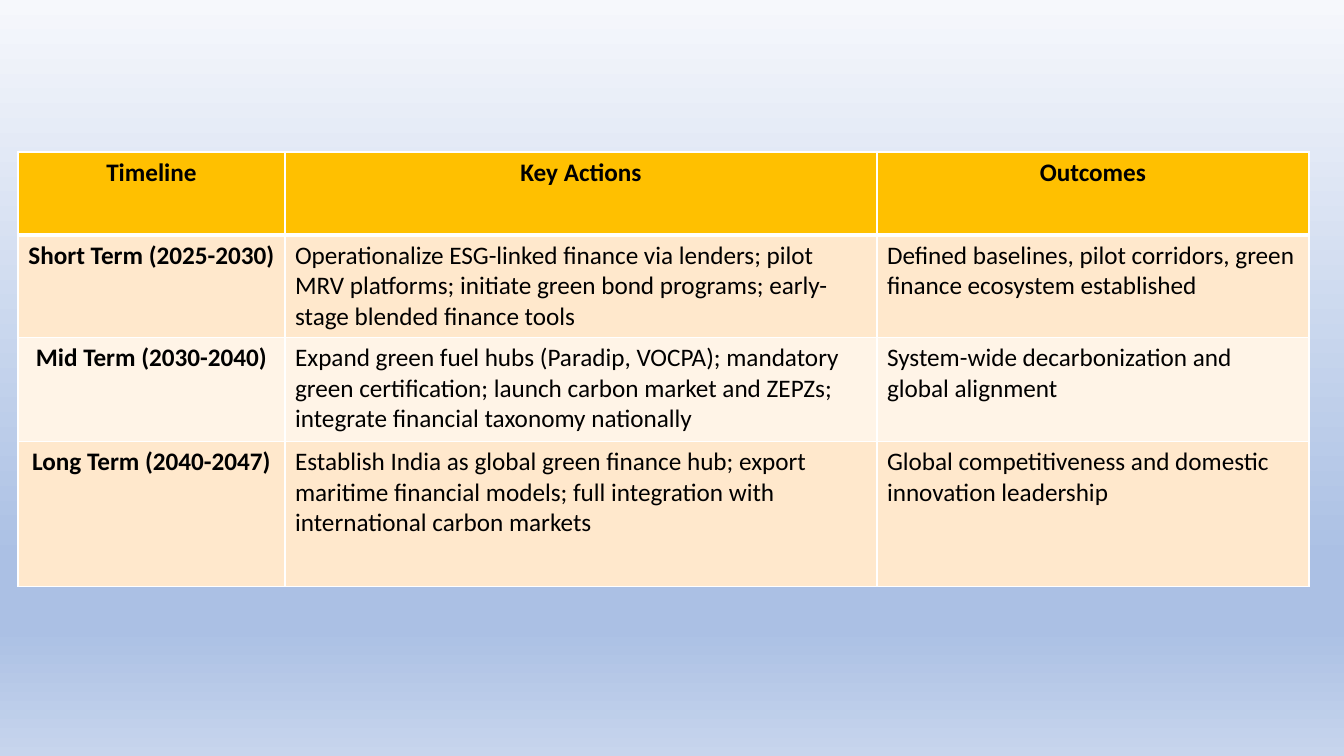
from lxml import etree
from pptx import Presentation
from pptx.dml.color import RGBColor
from pptx.enum.text import PP_ALIGN
from pptx.oxml.ns import qn
from pptx.util import Emu, Pt

CENTER, LEFT = PP_ALIGN.CENTER, PP_ALIGN.LEFT

BLACK = RGBColor(0x00, 0x00, 0x00)
WHITE = RGBColor(0xFF, 0xFF, 0xFF)
GOLD = RGBColor(0xFF, 0xC0, 0x00)
PEACH = RGBColor(0xFF, 0xE8, 0xCC)
CREAM = RGBColor(0xFF, 0xF4, 0xE7)
PALE_BLUE = RGBColor(0xF6, 0xF8, 0xFC)
MID_BLUE = RGBColor(0xAB, 0xC0, 0xE4)
SOFT_BLUE = RGBColor(0xC7, 0xD5, 0xED)

SKY = [(0, PALE_BLUE), (74, MID_BLUE), (83, MID_BLUE), (100, SOFT_BLUE)]
COLUMN_WIDTHS = [267, 592, 432]
ROW_HEIGHTS = [83, 101, 104, 145]
ROADMAP = [
    ("Timeline", "Key Actions", "Outcomes"),
    ("Short Term (2025-2030)",
     "Operationalize ESG-linked finance via lenders; pilot MRV platforms; "
     "initiate green bond programs; early-stage blended finance tools",
     "Defined baselines, pilot corridors, green finance ecosystem established"),
    ("Mid Term (2030-2040)",
     "Expand green fuel hubs (Paradip, VOCPA); mandatory green certification; "
     "launch carbon market and ZEPZs; integrate financial taxonomy nationally",
     "System-wide decarbonization and global alignment"),
    ("Long Term (2040-2047)",
     "Establish India as global green finance hub; export maritime financial "
     "models; full integration with international carbon markets",
     "Global competitiveness and domestic innovation leadership"),
]


def px(length):
    return Emu(round(length * 914400 / 100.8))


def add_color(parent, color):
    etree.SubElement(parent, qn("a:srgbClr"), val=str(color))


class SlideBuilder:
    font_name = "Calibri"
    font_size = Pt(18)

    def __init__(self, slide):
        self.slide = slide

    def background(self, stops):
        """Fill the slide from top to bottom with (percent, color) stops."""
        fill = self.slide.background.fill
        fill.gradient()
        fill.gradient_angle = 270
        stop_list = self.slide.element.find(".//" + qn("a:gsLst"))
        for default_stop in list(stop_list):
            stop_list.remove(default_stop)
        for percent, color in stops:
            add_color(etree.SubElement(stop_list, qn("a:gs"), pos=str(percent * 1000)), color)

    def border(self, cell, side, width):
        line = etree.SubElement(cell._tc.get_or_add_tcPr(), qn("a:ln" + side), w=str(Pt(width)))
        add_color(etree.SubElement(line, qn("a:solidFill")), WHITE)

    def cell(self, cell, text, fill, heading, widths):
        for side, width in widths.items():
            self.border(cell, side, width)
        cell.fill.solid()
        cell.fill.fore_color.rgb = fill
        cell.text = text
        paragraph = cell.text_frame.paragraphs[0]
        paragraph.alignment = CENTER if heading else LEFT
        font = paragraph.font
        font.name, font.size, font.bold = self.font_name, self.font_size, heading
        font.color.rgb = BLACK

    def table(self, left, top, rows, column_widths, row_heights):
        table = self.slide.shapes.add_table(
            len(rows), len(column_widths), px(left), px(top),
            px(sum(column_widths)), px(sum(row_heights))).table
        for column, width in zip(table.columns, column_widths):
            column.width = px(width)
        for r, (texts, height) in enumerate(zip(rows, row_heights)):
            table.rows[r].height = px(height)
            fill = GOLD if r == 0 else PEACH if r % 2 else CREAM
            widths = {"L": 1, "R": 1, "T": 3 if r == 1 else 1, "B": 3 if r == 0 else 1}
            for c, text in enumerate(texts):
                self.cell(table.cell(r, c), text, fill, r == 0 or c == 0, widths)


def main():
    deck = Presentation()
    deck.slide_width, deck.slide_height = px(1344), px(756)
    builder = SlideBuilder(deck.slides.add_slide(deck.slide_layouts[6]))
    builder.background(SKY)
    builder.table(18, 152, ROADMAP, COLUMN_WIDTHS, ROW_HEIGHTS)
    deck.save("out.pptx")


if __name__ == "__main__":
    main()
